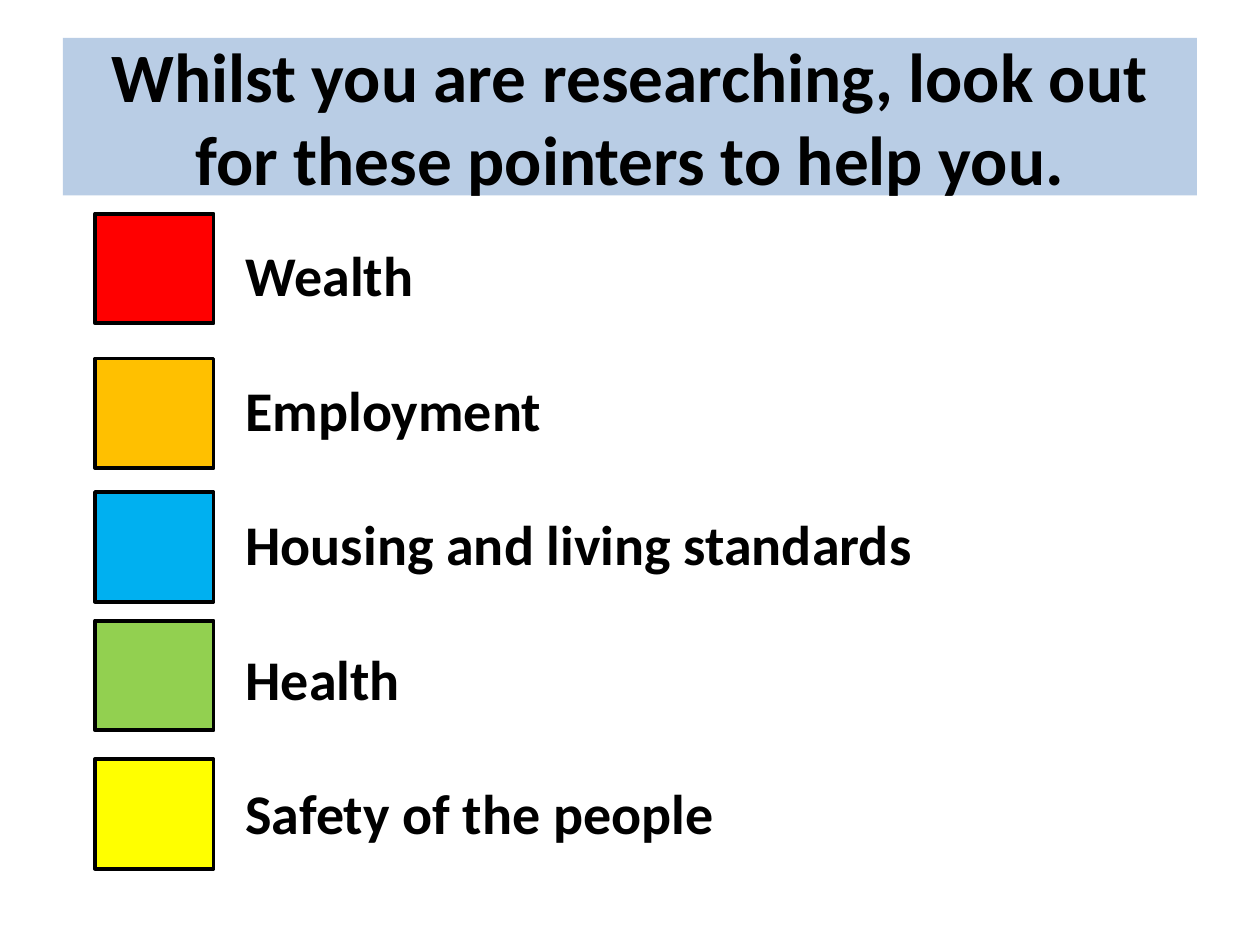
"""Build a slide that lists colour-coded research pointers."""
from dataclasses import dataclass

from pptx import Presentation, util as u
from pptx.dml.color import RGBColor
from pptx.enum import shapes, text

COLS, ROWS = 100, 75
POINTERS = [
    ("Wealth", "FF0000", 16.6),
    ("Employment", "FFC000", 28.1),
    ("Housing and living standards", "00B0F0", 38.7),
    ("Health", "92D050", 48.9),
    ("Safety of the people", "FFFF00", 59.9),
]


@dataclass(frozen=True)
class Theme:
    """Colours, font and sizes of the slide."""
    font: str = "Calibri"
    ink: str = "000000"
    banner: str = "B9CDE5"
    title: float = 39.6
    body: float = 32
    gap: float = 38.5
    outline: float = 2.25


T = Theme()


def grid(prs, col, row, cols, rows):
    """Turn grid columns and rows into left, top, width and height."""
    cw, rh = prs.slide_width / COLS, prs.slide_height / ROWS
    return [u.Emu(round(n)) for n in (col * cw, row * rh, cols * cw, rows * rh)]


def add_rect(s, box, fill, outline=None):
    """Add a flat rectangle, outlined if a line width is given."""
    sp = s.shapes.add_shape(shapes.MSO_SHAPE.RECTANGLE, *box)
    sp.shadow.inherit = False
    sp.fill.solid()
    sp.fill.fore_color.rgb = RGBColor.from_string(fill)
    if outline:
        sp.line.color.rgb = RGBColor.from_string(T.ink)
        sp.line.width = u.Pt(outline)
    else:
        sp.line.fill.background()
    return sp


def add_run(p, words, size):
    """Add a bold run to a paragraph."""
    r = p.add_run()
    r.text = words
    r.font.name, r.font.size, r.font.bold = T.font, u.Pt(size), True
    r.font.color.rgb = RGBColor.from_string(T.ink)


def add_title(s, box, words):
    """Add the centred title banner."""
    tf = add_rect(s, box, T.banner).text_frame
    tf.word_wrap = True
    tf.vertical_anchor = text.MSO_ANCHOR.MIDDLE
    p = tf.paragraphs[0]
    p.alignment = text.PP_ALIGN.CENTER
    add_run(p, words, T.title)


def add_list(s, box, lines):
    """Add a text box with evenly spaced lines."""
    tf = s.shapes.add_textbox(*box).text_frame
    tf.word_wrap = True
    for i, words in enumerate(lines):
        p = tf.add_paragraph() if i else tf.paragraphs[0]
        if i:
            p.space_before = u.Pt(T.gap)
        add_run(p, words, T.body)


def main():
    """Build and save the slide."""
    prs = Presentation()
    prs.slide_width, prs.slide_height = u.Inches(10), u.Inches(7.5)
    s = prs.slides.add_slide(prs.slide_layouts[6])
    add_title(s, grid(prs, 5, 3, 90, 12.5),
              "Whilst you are researching, look out for these pointers to help you.")
    for _, colour, row in POINTERS:
        sp = add_rect(s, grid(prs, 7.9, row, 8.7, 9.4), colour, T.outline)
        sp.rotation = 270
    add_list(s, grid(prs, 18.5, 18.6, 55.1, 49.5), [words for words, _, _ in POINTERS])
    prs.save("out.pptx")


if __name__ == "__main__":
    main()
